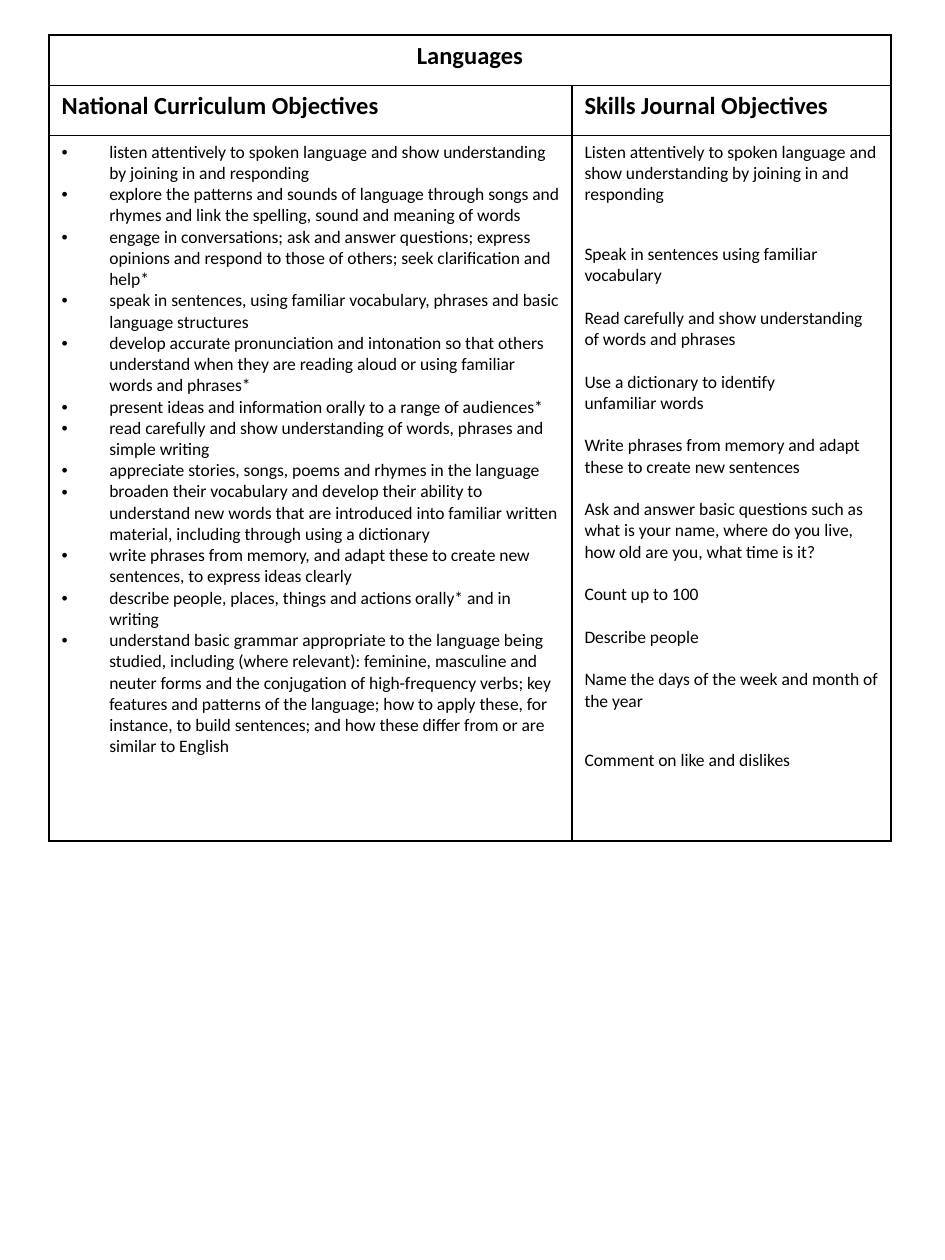
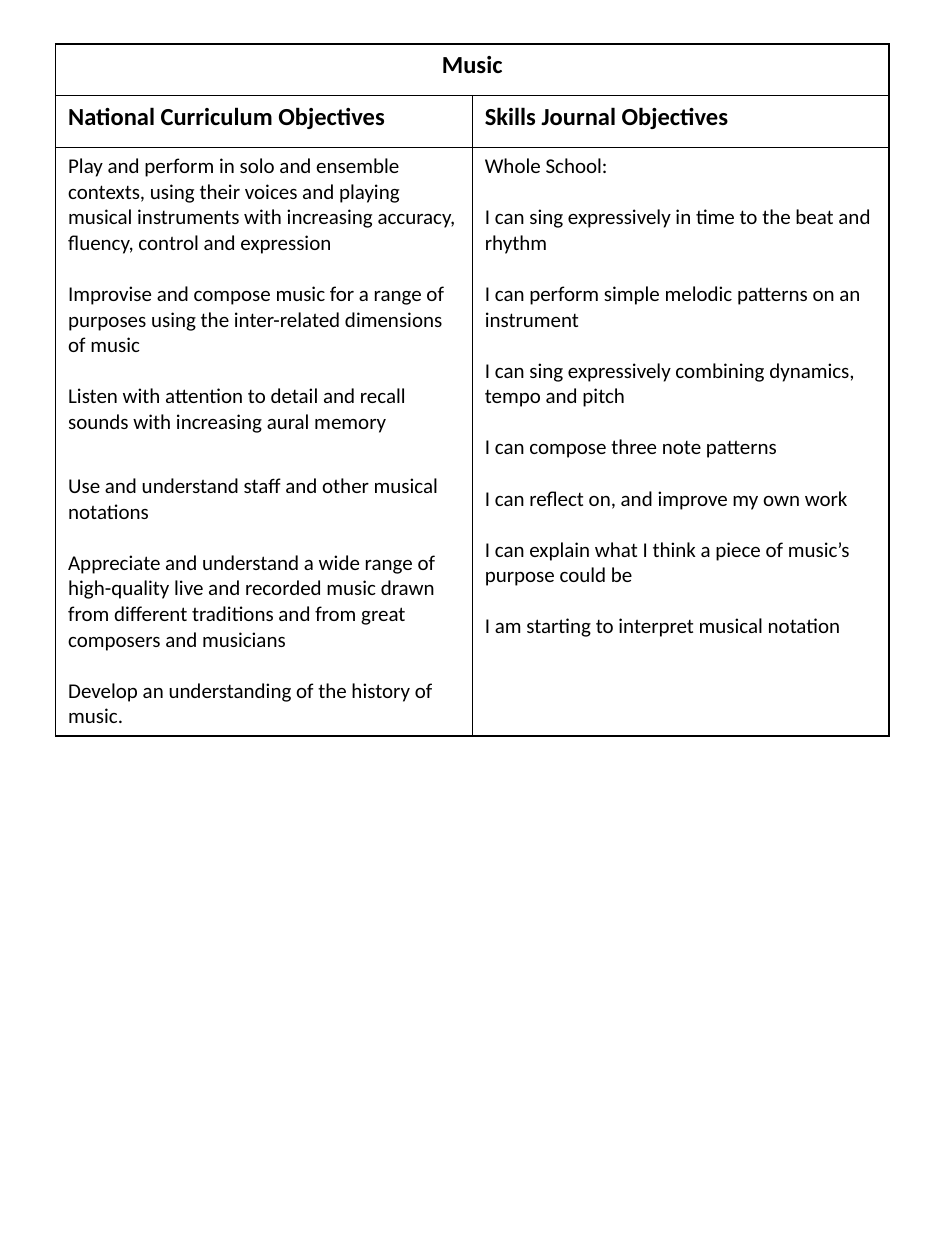
"""Build the Languages and Music curriculum objective slides."""
from lxml import etree
from pptx import Presentation
from pptx.dml.color import RGBColor
from pptx.enum.text import PP_ALIGN
from pptx.oxml.ns import qn
from pptx.util import Cm, Pt

LEFT, CENTER = PP_ALIGN.LEFT, PP_ALIGN.CENTER
COLORS = {"ink": "000000", "paper": "FFFFFF"}
FONT = "Calibri"
HEADINGS = ["National Curriculum Objectives", "Skills Journal Objectives"]
HEADING_SIZE = 14
BORDER = Pt(1)
INDENT = Cm(0.96)
WIDE_GAP = 22

SLIDES = [
    {
        "title": "Languages", "left": 0.99, "top": 0.71, "size": 10,
        "cols": [10.54, 6.43], "rows": [1.01, 1.01, 14.22],
        "columns": [
            {"bullet": True, "gap": 0, "wide": [], "lines": [
                "listen attentively to spoken language and show understanding by joining in and responding",
                "explore the patterns and sounds of language through songs and rhymes and link the spelling, "
                "sound and meaning of words",
                "engage in conversations; ask and answer questions; express opinions and respond to those of "
                "others; seek clarification and help*",
                "speak in sentences, using familiar vocabulary, phrases and basic language structures",
                "develop accurate pronunciation and intonation so that others understand when they are reading "
                "aloud or using familiar words and phrases*",
                "present ideas and information orally to a range of audiences*",
                "read carefully and show understanding of words, phrases and simple writing",
                "appreciate stories, songs, poems and rhymes in the language",
                "broaden their vocabulary and develop their ability to understand new words that are introduced "
                "into familiar written material, including through using a dictionary",
                "write phrases from memory, and adapt these to create new sentences, to express ideas clearly",
                "describe people, places, things and actions orally* and in writing",
                "understand basic grammar appropriate to the language being studied, including (where relevant): "
                "feminine, masculine and neuter forms and the conjugation of high-frequency verbs; key features "
                "and patterns of the language; how to apply these, for instance, to build sentences; and how "
                "these differ from or are similar to English",
            ]},
            {"bullet": False, "gap": 12.2, "wide": [1, 9], "lines": [
                "Listen attentively to spoken language and show understanding by joining in and responding",
                "Speak in sentences using familiar vocabulary",
                "Read carefully and show understanding of words and phrases",
                "Use a dictionary to identify\vunfamiliar words",
                "Write phrases from memory and adapt these to create new sentences",
                "Ask and answer basic questions such as what is your name, where do you live, how old are you, "
                "what time is it?",
                "Count up to 100",
                "Describe people",
                "Name the days of the week and month of the year",
                "Comment on like and dislikes",
            ]},
        ],
    },
    {
        "title": "Music", "left": 1.12, "top": 0.89, "size": 12,
        "cols": [8.4, 8.4], "rows": [1.04, 1.04, 11.86],
        "columns": [
            {"bullet": False, "gap": 14.6, "wide": [3], "lines": [
                "Play and perform in solo and ensemble contexts, using their voices and playing musical "
                "instruments with increasing accuracy, fluency, control and expression",
                "Improvise and compose music for a range of purposes using the inter-related dimensions of music",
                "Listen with attention to detail and recall sounds with increasing aural memory",
                "Use and understand staff and other musical notations",
                "Appreciate and understand a wide range of high-quality live and recorded music drawn from "
                "different traditions and from great composers and musicians",
                "Develop an understanding of the history of music.",
            ]},
            {"bullet": False, "gap": 14.6, "wide": [], "lines": [
                "Whole School:",
                "I can sing expressively in time to the beat and rhythm",
                "I can perform simple melodic patterns on an instrument",
                "I can sing expressively combining dynamics, tempo and pitch",
                "I can compose three note patterns",
                "I can reflect on, and improve my own work",
                "I can explain what I think a piece of music’s purpose could be",
                "I am starting to interpret musical notation",
            ]},
        ],
    },
]


def write(p, text, size=HEADING_SIZE, bold=True, align=LEFT, gap=0, bullet=False):
    p.text = text
    p.alignment = align
    p.space_before = Pt(gap)
    for r in p.runs:
        r.font.name = FONT
        r.font.size = Pt(size)
        r.font.bold = bold
        r.font.color.rgb = RGBColor.from_string(COLORS["ink"])
    if bullet:
        pPr = p._p.get_or_add_pPr()
        pPr.set("marL", str(INDENT))
        pPr.set("indent", str(-INDENT))
        etree.SubElement(pPr, qn("a:buFont")).set("typeface", "Arial")
        etree.SubElement(pPr, qn("a:buChar")).set("char", "•")


def style_cell(cell):
    cell.fill.solid()
    cell.fill.fore_color.rgb = RGBColor.from_string(COLORS["paper"])
    tcPr = cell._tc.get_or_add_tcPr()
    for i, side in enumerate(["lnL", "lnR", "lnT", "lnB"]):
        ln = etree.Element(qn(f"a:{side}"), w=str(BORDER))
        fill = etree.SubElement(ln, qn("a:solidFill"))
        etree.SubElement(fill, qn("a:srgbClr")).set("val", COLORS["ink"])
        tcPr.insert(i, ln)


prs = Presentation()
prs.slide_width, prs.slide_height = Cm(19.05), Cm(25.4)

for page in SLIDES:
    s = prs.slides.add_slide(prs.slide_layouts[6])
    cols, rows = page["cols"], page["rows"]
    table = s.shapes.add_table(len(rows), len(cols), Cm(page["left"]), Cm(page["top"]),
                               Cm(sum(cols)), Cm(sum(rows))).table
    table.first_row = table.horz_banding = False
    for col, width in zip(table.columns, cols):
        col.width = Cm(width)
    for row, height in zip(table.rows, rows):
        row.height = Cm(height)
    for cell in table.iter_cells():
        style_cell(cell)

    table.cell(0, 0).merge(table.cell(0, 1))
    write(table.cell(0, 0).text_frame.paragraphs[0], page["title"], align=CENTER)
    for c, column in enumerate(page["columns"]):
        write(table.cell(1, c).text_frame.paragraphs[0], HEADINGS[c])
        tf = table.cell(2, c).text_frame
        for i, line in enumerate(column["lines"]):
            p = tf.add_paragraph() if i else tf.paragraphs[0]
            gap = WIDE_GAP if i in column["wide"] else column["gap"] if i else 0
            write(p, line, size=page["size"], bold=False, gap=gap, bullet=column["bullet"])

prs.save("out.pptx")
